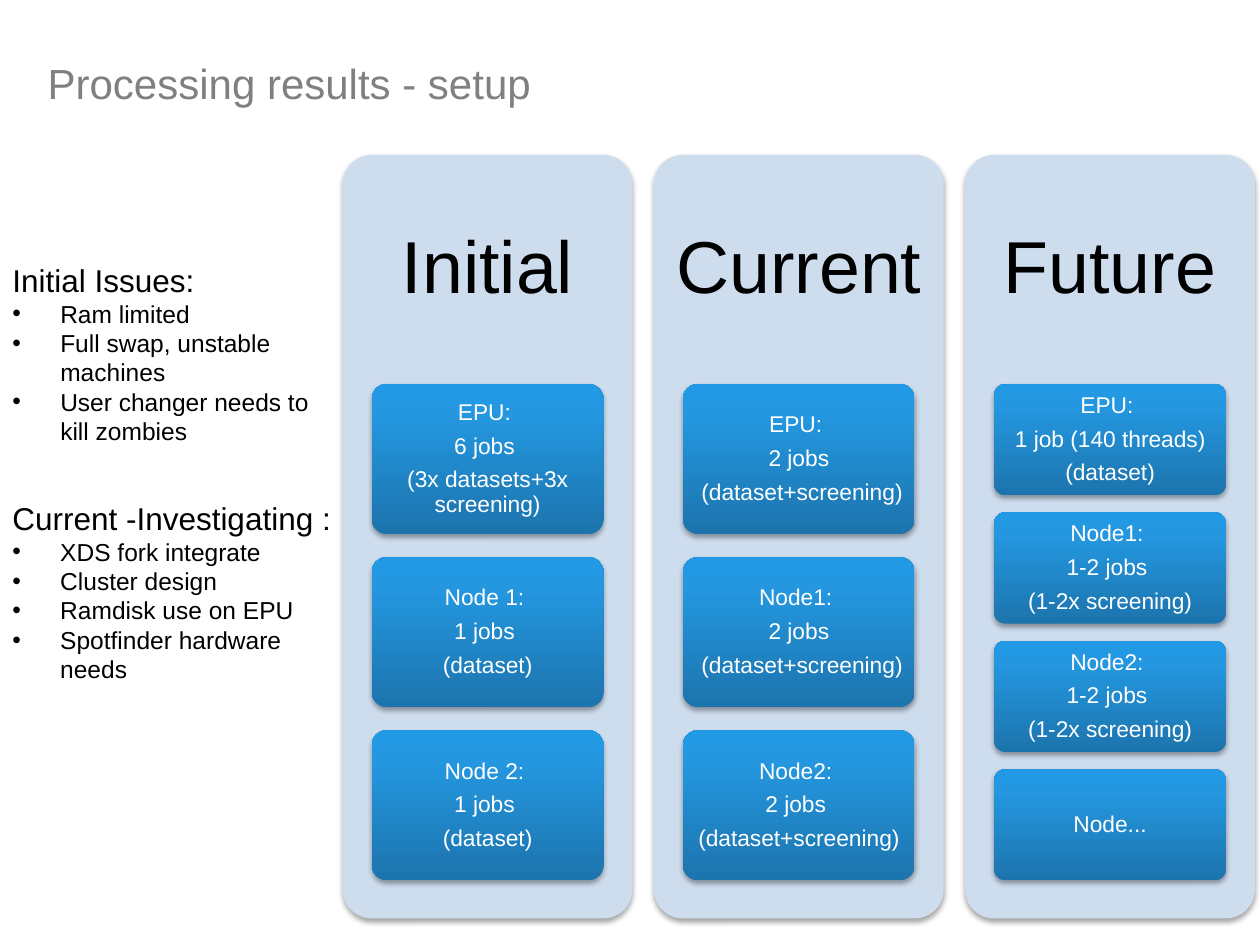
from dataclasses import dataclass

from lxml import etree
from pptx import Presentation
from pptx import util as u
from pptx.dml.color import RGBColor
from pptx.enum import shapes, text
from pptx.oxml import parse_xml
from pptx.oxml.ns import nsdecls, qn


@dataclass(frozen=True)
class Theme:
    font: str = "Arial"
    title_color: str = "808080"
    ink: str = "000000"
    card_ink: str = "FFFFFF"
    panel: str = "CEDDEE"
    card: tuple = ((0, "1C74AD"), (80, "2497E0"), (100, "2199E5"))
    title: int = 24
    heading: int = 42
    card_text: int = 13
    note_heading: int = 18
    note: int = 14


THEME = Theme()
BLANK_LAYOUT = 6

# Columns of the diagram, in inches
FIRST_COLUMN, COLUMN_PITCH, COLUMN_WIDTH = 2.72, 2.47, 2.3
COLUMN_TOP, COLUMN_HEIGHT = 1.23, 6.06
# Shares of a column, and of a card's height for the gap
HEADING_SHARE, CARDS_SHARE, SIDE_SHARE = 0.3, 0.65, 0.1
GAP_SHARE = 2 / 13

COLUMNS = [
    ("Initial", [
        ["EPU: ", "6 jobs ", "(3x datasets+3x screening)"],
        ["Node 1: ", "1 jobs ", "(dataset)"],
        ["Node 2: ", "1 jobs ", "(dataset)"],
    ]),
    ("Current", [
        ["EPU: ", "2 jobs", " (dataset+screening)"],
        ["Node1: ", "2 jobs", " (dataset+screening)"],
        ["Node2: ", "2 jobs ", "(dataset+screening)"],
    ]),
    ("Future", [
        ["EPU: ", "1 job (140 threads)", "(dataset)"],
        ["Node1: ", "1-2 jobs ", "(1-2x screening)"],
        ["Node2: ", "1-2 jobs ", "(1-2x screening)"],
        ["Node..."],
    ]),
]

NOTES = [
    ((0, 2.02, 2.72, 1.58), "Initial Issues:",
     ["Ram limited", "Full swap, unstable machines",
      "User changer needs to kill zombies"]),
    ((0, 3.91, 2.87, 1.58), "Current -Investigating :",
     ["XDS fork integrate", "Cluster design", "Ramdisk use on EPU",
      "Spotfinder hardware needs"]),
]


def inches(box):
    return [u.Inches(length) for length in box]


def add_bullet(paragraph, indent=0.38):
    properties = paragraph._p.get_or_add_pPr()
    properties.set("marL", str(u.Inches(indent)))
    properties.set("indent", str(-u.Inches(indent)))
    etree.SubElement(properties, qn("a:buFont")).set("typeface", THEME.font)
    etree.SubElement(properties, qn("a:buChar")).set("char", "•")


def write(frame, lines, size, color, align=text.PP_ALIGN.LEFT, bullet=False,
          line_spacing=None, space_after=None, more=False):
    """Fill the frame with one paragraph per line; more=True keeps earlier ones."""
    for number, line in enumerate(lines):
        fresh = number == 0 and not more
        paragraph = frame.paragraphs[0] if fresh else frame.add_paragraph()
        if bullet:
            add_bullet(paragraph)
        paragraph.alignment = align
        paragraph.line_spacing = line_spacing
        paragraph.space_after = space_after
        run = paragraph.add_run()
        run.text = line
        run.font.name = THEME.font
        run.font.size = u.Pt(size)
        run.font.color.rgb = RGBColor.from_string(color)


def set_frame(frame, anchor, insets=(0.1, 0.05)):
    frame.word_wrap = True
    frame.vertical_anchor = anchor
    frame.margin_left = frame.margin_right = u.Inches(insets[0])
    frame.margin_top = frame.margin_bottom = u.Inches(insets[1])
    return frame


def add_text_box(slide, box, anchor=text.MSO_ANCHOR.MIDDLE, **frame_format):
    return set_frame(slide.shapes.add_textbox(*inches(box)).text_frame,
                     anchor, **frame_format)


def add_rounded(slide, box):
    """Add a borderless rounded rectangle with a soft shadow below it."""
    shape = slide.shapes.add_shape(shapes.MSO_SHAPE.ROUNDED_RECTANGLE, *inches(box))
    shape.adjustments[0] = 0.1
    shape.line.fill.background()
    shape._element.spPr.append(parse_xml(
        f'<a:effectLst {nsdecls("a")}><a:outerShdw blurRad="{u.Pt(3.1)}" '
        f'dist="{u.Pt(1.8)}" dir="5400000" rotWithShape="0">'
        '<a:srgbClr val="000000"><a:alpha val="35000"/></a:srgbClr>'
        '</a:outerShdw></a:effectLst>'))
    return shape


def fill_gradient(shape, stops):
    """Run the stops from the bottom edge to the top edge."""
    shape.fill.gradient()
    shape.fill.gradient_angle = 90
    stop_list = shape._element.spPr.find(".//" + qn("a:gsLst"))
    for old in list(stop_list):
        stop_list.remove(old)
    for position, color in stops:
        stop = etree.SubElement(stop_list, qn("a:gs"), pos=str(position * 1000))
        etree.SubElement(stop, qn("a:srgbClr"), val=color)


def add_card(slide, box, lines):
    card = add_rounded(slide, box)
    fill_gradient(card, THEME.card)
    frame = set_frame(card.text_frame, text.MSO_ANCHOR.MIDDLE, insets=(0.04, 0.03))
    write(frame, lines, THEME.card_text, THEME.card_ink,
          align=text.PP_ALIGN.CENTER, line_spacing=0.9, space_after=u.Pt(5.2))


def add_column(slide, left, heading, cards):
    panel = add_rounded(slide, (left, COLUMN_TOP, COLUMN_WIDTH, COLUMN_HEIGHT))
    panel.fill.solid()
    panel.fill.fore_color.rgb = RGBColor.from_string(THEME.panel)

    heading_height = HEADING_SHARE * COLUMN_HEIGHT
    frame = add_text_box(slide, (left, COLUMN_TOP, COLUMN_WIDTH, heading_height),
                         insets=(0.17, 0.17))
    write(frame, [heading], THEME.heading, THEME.ink,
          align=text.PP_ALIGN.CENTER, line_spacing=0.9)

    side = SIDE_SHARE * COLUMN_WIDTH
    height = CARDS_SHARE * COLUMN_HEIGHT / (len(cards) + (len(cards) - 1) * GAP_SHARE)
    for row, lines in enumerate(cards):
        top = COLUMN_TOP + heading_height + row * height * (1 + GAP_SHARE)
        add_card(slide, (left + side, top, COLUMN_WIDTH - 2 * side, height), lines)


def add_note(slide, box, heading, points):
    frame = add_text_box(slide, box, anchor=text.MSO_ANCHOR.TOP)
    write(frame, [heading], THEME.note_heading, THEME.ink)
    write(frame, points, THEME.note, THEME.ink, bullet=True, more=True)


def main():
    deck = Presentation()
    deck.slide_width, deck.slide_height = inches((10, 7.5))
    slide = deck.slides.add_slide(deck.slide_layouts[BLANK_LAYOUT])

    title = add_text_box(slide, (0.28, 0.21, 9, 0.89))
    write(title, ["Processing results - setup"], THEME.title, THEME.title_color)
    for number, (heading, cards) in enumerate(COLUMNS):
        add_column(slide, FIRST_COLUMN + number * COLUMN_PITCH, heading, cards)
    for box, heading, points in NOTES:
        add_note(slide, box, heading, points)

    deck.save("out.pptx")


if __name__ == "__main__":
    main()
